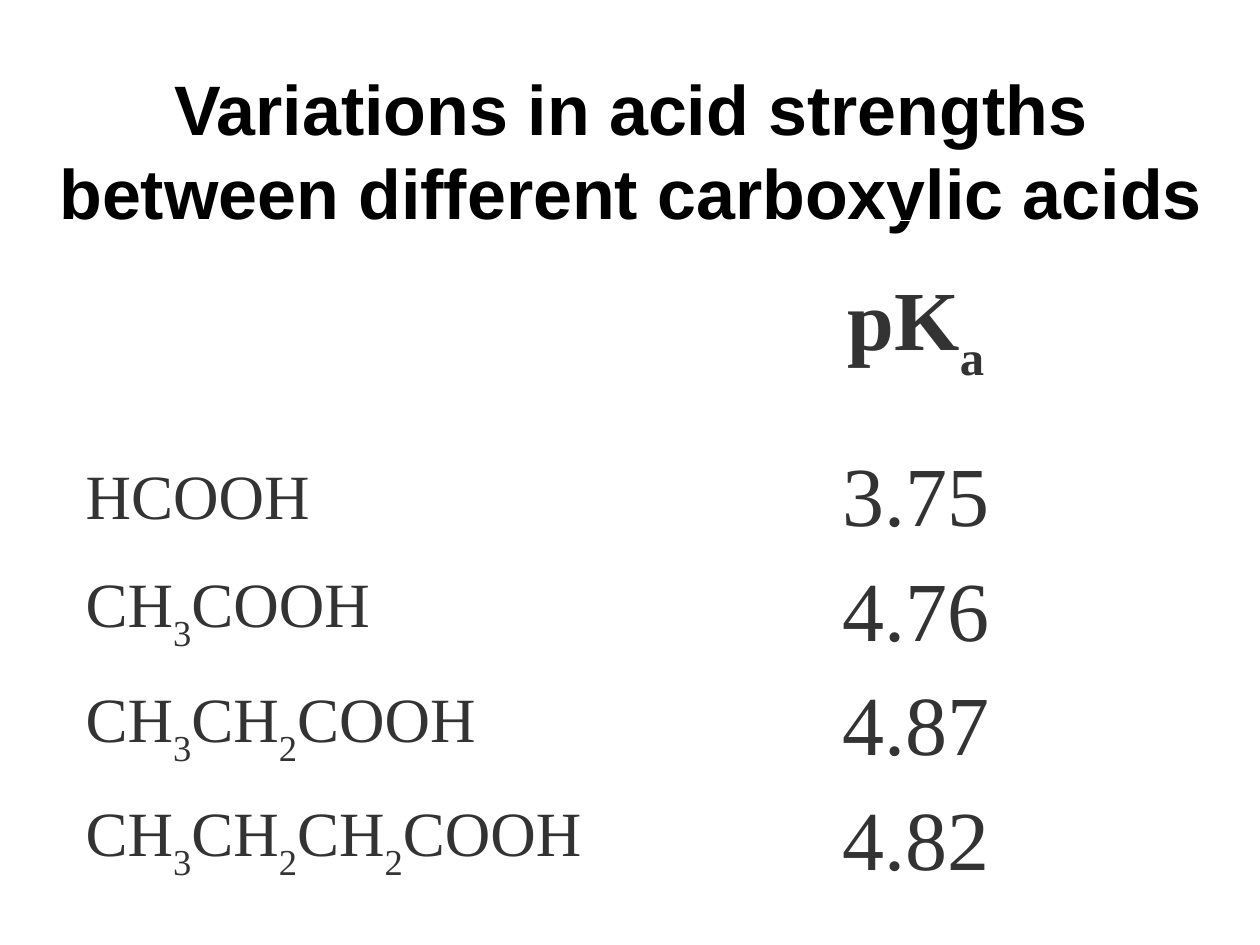
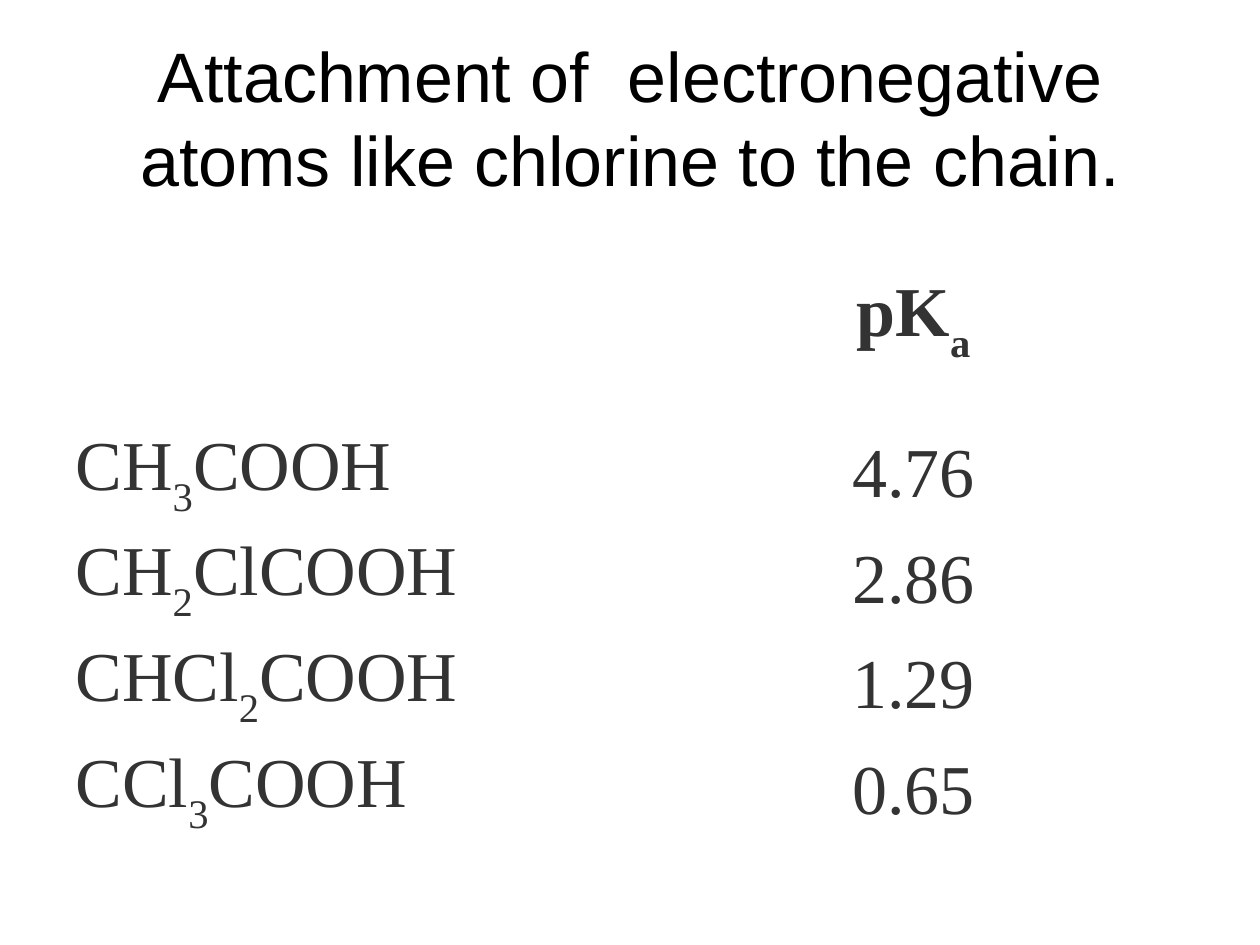
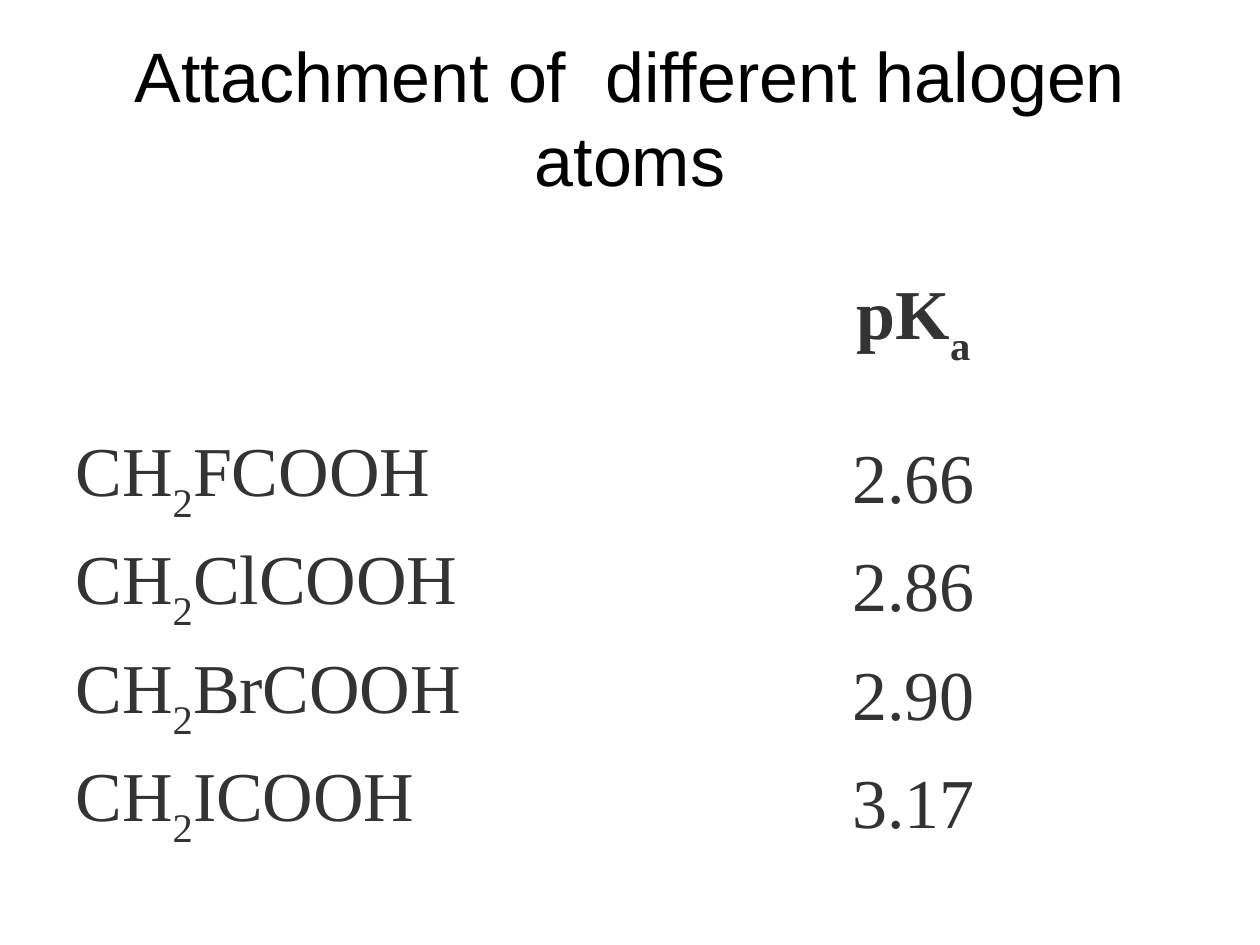
from itertools import groupby

from pptx import Presentation
from pptx.dml.color import RGBColor
from pptx.enum.text import MSO_ANCHOR, MSO_AUTO_SIZE, PP_ALIGN
from pptx.util import Inches, Pt

MIDDLE = MSO_ANCHOR.MIDDLE
LEFT, CENTER = PP_ALIGN.LEFT, PP_ALIGN.CENTER

BLACK = RGBColor(0x00, 0x00, 0x00)
DARK_GRAY = RGBColor(0x33, 0x33, 0x33)
TITLE_FONT = "Arial"
TABLE_FONT = "Times New Roman"
TITLE_SIZE = 40
TITLE_BOX = (0.5, 0.3, 9, 1.25)
TABLE_TOP = 1.75
SUBSCRIPTS = "23a"
TITLE_ONLY_LAYOUT = 5

CHAIN_ACIDS = [
    ("HCOOH", "3.75"),
    ("CH3COOH", "4.76"),
    ("CH3CH2COOH", "4.87"),
    ("CH3CH2CH2COOH", "4.82"),
]
CHLORINE_ACIDS = [
    ("CH3COOH", "4.76"),
    ("CH2ClCOOH", "2.86"),
    ("CHCl2COOH", "1.29"),
    ("CCl3COOH", "0.65"),
]
HALOGEN_ACIDS = [
    ("CH2FCOOH", "2.66"),
    ("CH2ClCOOH", "2.86"),
    ("CH2BrCOOH", "2.90"),
    ("CH2ICOOH", "3.17"),
]


def style_font(font, name, size, color, bold=False):
    font.name = name
    font.size = Pt(size)
    font.color.rgb = color
    font.bold = bold


def add_titled_slide(presentation, title, box=TITLE_BOX, bold=False):
    slide = presentation.slides.add_slide(presentation.slide_layouts[TITLE_ONLY_LAYOUT])
    shape = slide.shapes.title
    shape.left, shape.top, shape.width, shape.height = map(Inches, box)
    text_frame = shape.text_frame
    text_frame.text = title
    text_frame.word_wrap = True
    text_frame.auto_size = MSO_AUTO_SIZE.NONE
    text_frame.vertical_anchor = MIDDLE
    paragraph = text_frame.paragraphs[0]
    paragraph.alignment = CENTER
    style_font(paragraph.runs[0].font, TITLE_FONT, TITLE_SIZE, BLACK, bold)
    return slide


def write_value(cell, value, size):
    paragraph = cell.text_frame.paragraphs[0]
    paragraph.text = value
    paragraph.alignment = CENTER
    style_font(paragraph.runs[0].font, TABLE_FONT, size, DARK_GRAY)


def write_formula(cell, formula, size, alignment=LEFT, bold=False):
    """Write a formula with its SUBSCRIPTS characters lowered."""
    paragraph = cell.text_frame.paragraphs[0]
    paragraph.alignment = alignment
    for lowered, characters in groupby(formula, lambda character: character in SUBSCRIPTS):
        run = paragraph.add_run()
        run.text = "".join(characters)
        style_font(run.font, TABLE_FONT, size, DARK_GRAY, bold)
        if lowered:
            run.font._element.set("baseline", "-30000")


def add_acid_table(slide, acids, left, column_width, header_height, row_height,
                   formula_size=40, value_size=40):
    height = header_height + len(acids) * row_height
    table = slide.shapes.add_table(
        len(acids) + 1, 2, Inches(left), Inches(TABLE_TOP),
        Inches(2 * column_width), Inches(height)).table
    table.first_row = False
    table.horz_banding = False
    for row in table.rows:
        row.height = Inches(row_height)
    table.rows[0].height = Inches(header_height)
    for cell in table.iter_cells():
        cell.fill.background()
        cell.vertical_anchor = MIDDLE

    write_formula(table.cell(0, 1), "pKa", value_size, CENTER, bold=True)
    for row_index, (formula, value) in enumerate(acids, start=1):
        write_formula(table.cell(row_index, 0), formula, formula_size)
        write_value(table.cell(row_index, 1), value, value_size)


def main():
    presentation = Presentation()
    presentation.slide_width = Inches(10)
    presentation.slide_height = Inches(7.5)

    slide = add_titled_slide(
        presentation, "Variations in acid strengths between different carboxylic acids",
        box=(0.17, 0.3, 9.67, 1.78), bold=True)
    add_acid_table(slide, CHAIN_ACIDS, 0.58, 4.46, 1.75, 0.91,
                   formula_size=36, value_size=48)

    slide = add_titled_slide(
        presentation, "Attachment of  electronegative atoms like chlorine to the chain.")
    add_acid_table(slide, CHLORINE_ACIDS, 0.5, 4.5, 1.59, 0.84)

    slide = add_titled_slide(presentation, "Attachment of  different halogen atoms")
    add_acid_table(slide, HALOGEN_ACIDS, 0.5, 4.5, 1.63, 0.86)

    presentation.save("out.pptx")


if __name__ == "__main__":
    main()
